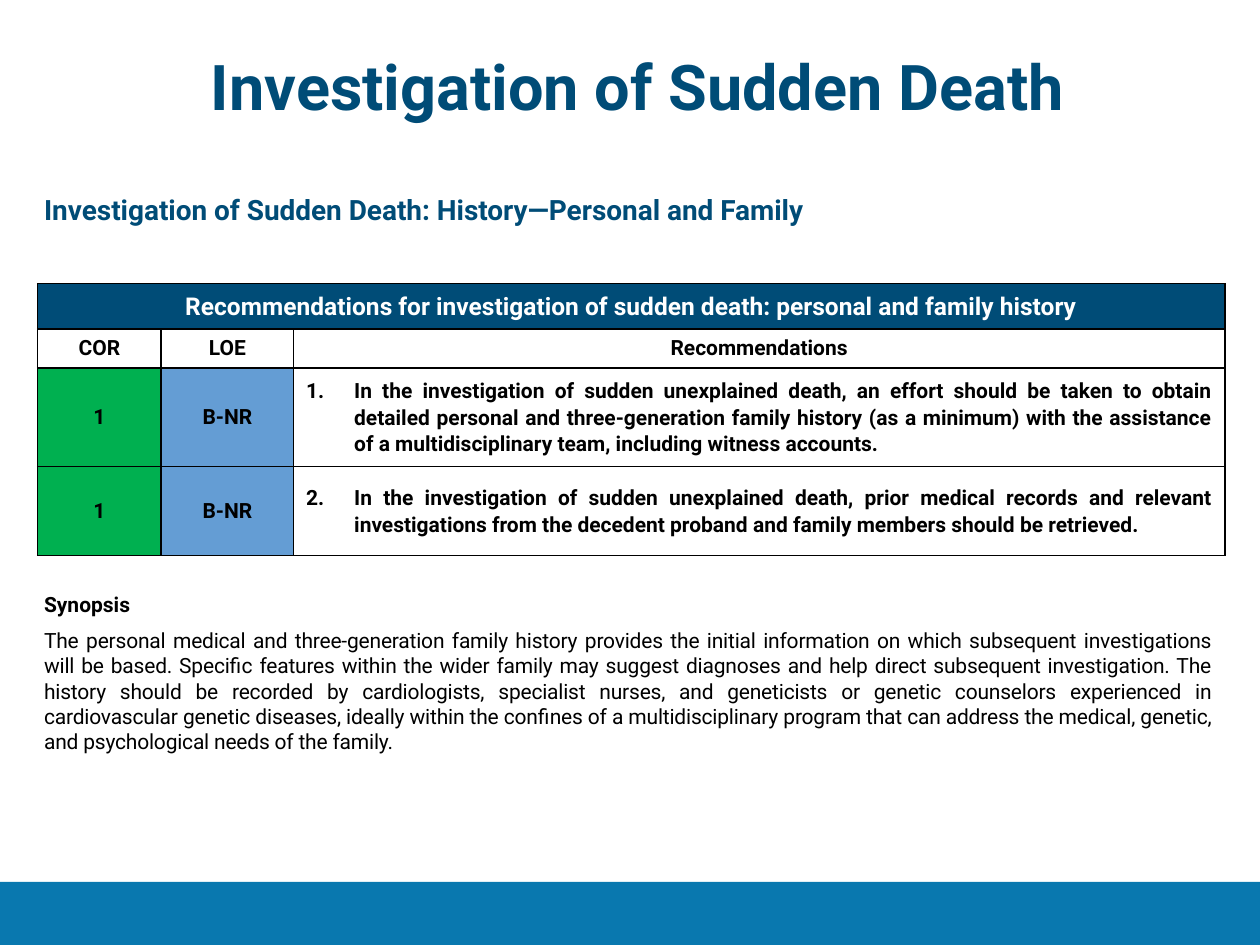
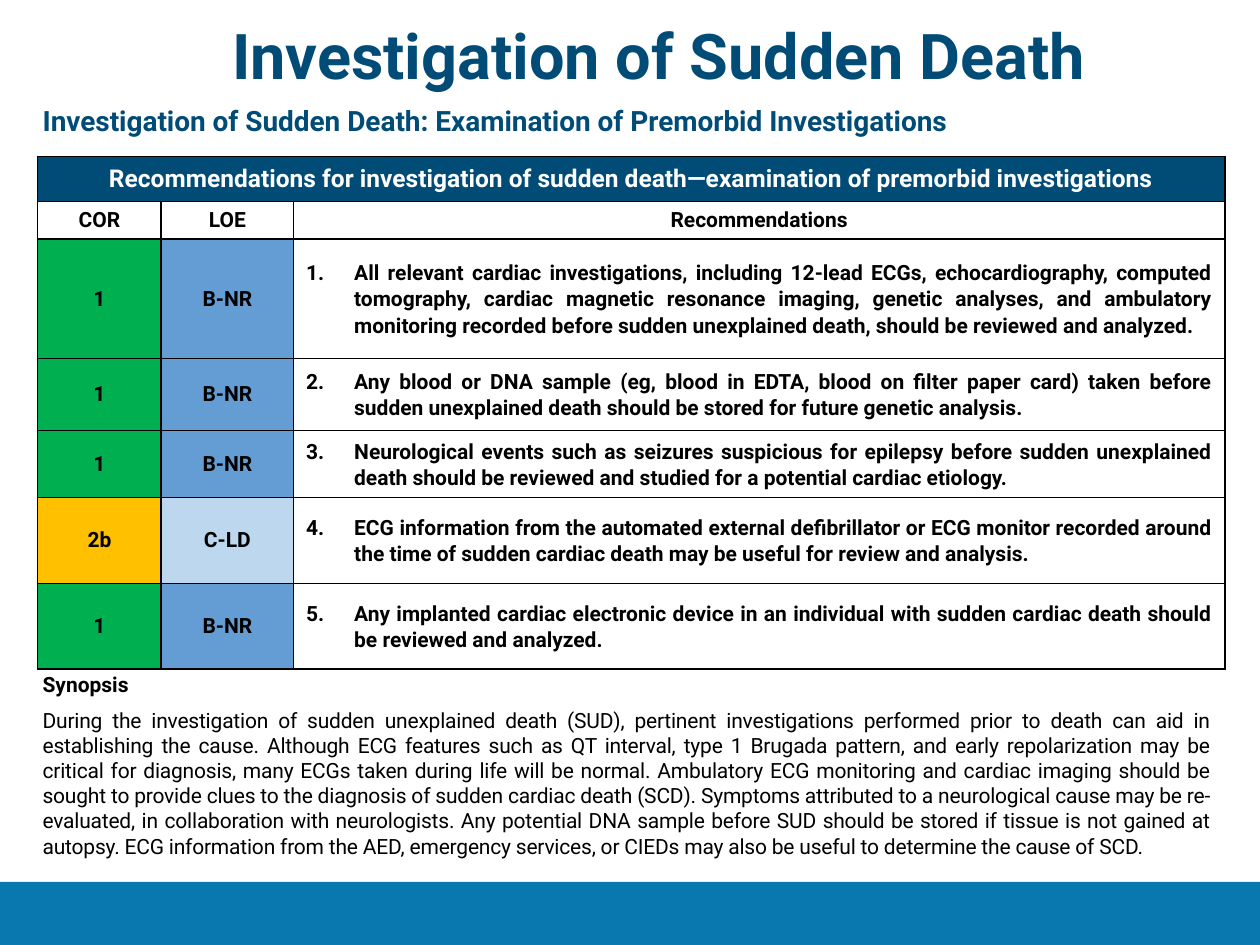
from lxml import etree
from pptx import Presentation
from pptx.dml.color import RGBColor
from pptx.enum import shapes, text
from pptx.oxml import ns
from pptx.util import Cm, Pt

FONT = "Roboto"
NAVY = RGBColor(0x00, 0x4C, 0x77)
BAND_BLUE = RGBColor(0x09, 0x78, 0xAF)
WHITE = RGBColor(0xFF, 0xFF, 0xFF)
BLACK = RGBColor(0x00, 0x00, 0x00)
CLASS_COLORS = {"1": RGBColor(0x00, 0xB0, 0x50), "2b": RGBColor(0xFF, 0xC0, 0x00)}
EVIDENCE_COLORS = {"B-NR": RGBColor(0x64, 0x9D, 0xD4), "C-LD": RGBColor(0xBD, 0xD7, 0xEE)}

PAGE_WIDTH, PAGE_HEIGHT, BAND_HEIGHT = 25.4, 19.05, 1.27
TABLE_LEFT = 0.76
COLUMN_WIDTHS = (2.49, 2.67, 18.77)
HEADER_HEIGHT = 0.91
LINE_SPACING = 1.07
NUMBER_INDENT = Cm(0.97)
CENTER, JUSTIFY = text.PP_ALIGN.CENTER, text.PP_ALIGN.JUSTIFY
TITLE = "Investigation of Sudden Death"


def style_para(para, size, color, align=None, bold=True):
    if align is not None:
        para.alignment = align
    for span in para.runs:
        font = span.font
        font.name, font.size, font.bold = FONT, Pt(size), bold
        font.color.rgb = color


def add_text(page, left, top, width, height, lines):
    """Add a text box with one paragraph per line of text."""
    box = page.shapes.add_textbox(Cm(left), Cm(top), Cm(width), Cm(height))
    frame = box.text_frame
    frame.word_wrap = True
    frame.auto_size = text.MSO_AUTO_SIZE.SHAPE_TO_FIT_TEXT
    frame.text = "\n".join(lines)
    return frame.paragraphs


def add_title(page, left, top, height):
    para, = add_text(page, left, top, 24.23, height, [TITLE])
    style_para(para, 36, NAVY, CENTER)


def add_subtitle(page, left, top, topic):
    para, = add_text(page, left, top, 22.86, 0.94, [f"{TITLE}: {topic}"])
    style_para(para, 16, NAVY)


def add_synopsis(page, left, top, height, body_text):
    heading, body = add_text(page, left, top, 24.05, height, ["Synopsis", body_text])
    style_para(heading, 12, BLACK, JUSTIFY)
    heading.space_after = Pt(6)
    style_para(body, 12, BLACK, JUSTIFY, bold=False)
    for span in body.runs:
        span.font._element.set("spc", "-10")


def add_band(page):
    band = page.shapes.add_shape(shapes.MSO_SHAPE.RECTANGLE, 0, Cm(PAGE_HEIGHT - BAND_HEIGHT),
                                 Cm(PAGE_WIDTH), Cm(BAND_HEIGHT))
    band.shadow.inherit = False
    band.fill.solid()
    band.fill.fore_color.rgb = BAND_BLUE
    band.line.fill.background()


def add_borders(cell):
    """Draw a thin black line on every side; call before the cell gets its fill."""
    properties = cell._tc.get_or_add_tcPr()
    for side in ("lnL", "lnR", "lnT", "lnB"):
        line = etree.SubElement(properties, ns.qn(f"a:{side}"), w=str(Pt(1)))
        fill = etree.SubElement(line, ns.qn("a:solidFill"))
        etree.SubElement(fill, ns.qn("a:srgbClr"), val=str(BLACK))


def fill_cell(cell, words, color=None, margins=(0.25, 0)):
    """Set text, margins, borders and fill, and return the paragraph."""
    cell.text_frame.text = words
    cell.margin_left = cell.margin_right = Cm(margins[0])
    cell.margin_top = cell.margin_bottom = Cm(margins[1])
    cell.vertical_anchor = text.MSO_ANCHOR.MIDDLE
    add_borders(cell)
    if color is None:
        cell.fill.background()
    else:
        cell.fill.solid()
        cell.fill.fore_color.rgb = color
    para = cell.text_frame.paragraphs[0]
    style_para(para, 12, BLACK, CENTER)
    return para


def number_para(para, number):
    """Make the paragraph a justified item of a numbered list."""
    properties = para._p.get_or_add_pPr()
    properties.set("marL", str(NUMBER_INDENT))
    properties.set("indent", str(-NUMBER_INDENT))
    etree.SubElement(properties, ns.qn("a:buFont"), typeface="+mj-lt")
    etree.SubElement(properties, ns.qn("a:buAutoNum"), type="arabicPeriod", startAt=str(number))
    para.line_spacing = LINE_SPACING
    para.alignment = JUSTIFY


def add_recommendations(page, top, heading, label_height, items):
    """Add the table; each item is (row height, class, evidence level, advice)."""
    heights = [HEADER_HEIGHT, label_height] + [item[0] for item in items]
    frame = page.shapes.add_table(len(heights), len(COLUMN_WIDTHS), Cm(TABLE_LEFT), Cm(top),
                                  Cm(sum(COLUMN_WIDTHS)), Cm(sum(heights)))
    table = frame.table
    table.first_row = table.horz_banding = False
    for column, width in zip(table.columns, COLUMN_WIDTHS):
        column.width = Cm(width)
    for row, height in zip(table.rows, heights):
        row.height = Cm(height)

    header = table.cell(0, 0)
    header.merge(table.cell(0, 2))
    para = fill_cell(header, heading, NAVY, margins=(0.28, 0.13))
    header.vertical_anchor = text.MSO_ANCHOR.TOP
    style_para(para, 14, WHITE)
    para.line_spacing, para.space_after = LINE_SPACING, Pt(8)
    for covered in (table.cell(0, 1), table.cell(0, 2)):
        add_borders(covered)

    for column, label in enumerate(("COR", "LOE", "Recommendations")):
        fill_cell(table.cell(1, column), label)
    for number, (_, grade, evidence, advice) in enumerate(items, 1):
        row = number + 1
        fill_cell(table.cell(row, 0), grade, CLASS_COLORS[grade])
        fill_cell(table.cell(row, 1), evidence, EVIDENCE_COLORS[evidence])
        number_para(fill_cell(table.cell(row, 2), advice), number)


def add_page(deck):
    page = deck.slides.add_slide(deck.slide_layouts[6])
    add_band(page)
    return page


def add_history_page(deck):
    page = add_page(deck)
    add_recommendations(
        page, 5.72,
        "Recommendations for investigation of sudden death: personal and family history", 0.79, [
            (1.98, "1", "B-NR",
             "In the investigation of sudden unexplained death, an effort should be taken to "
             "obtain detailed personal and three-generation family history (as a minimum) with "
             "the assistance of a multidisciplinary team, including witness accounts."),
            (1.8, "1", "B-NR",
             "In the investigation of sudden unexplained death, prior medical records and "
             "relevant investigations from the decedent proband and family members should be "
             "retrieved."),
        ])
    add_title(page, 0.74, 0.84, 1.8)
    add_subtitle(page, 0.64, 3.76, "History—Personal and Family")
    add_synopsis(
        page, 0.64, 11.81, 3.56,
        "The personal medical and three-generation family history provides the initial "
        "information on which subsequent investigations will be based. Specific features within "
        "the wider family may suggest diagnoses and help direct subsequent investigation. The "
        "history should be recorded by cardiologists, specialist nurses, and geneticists or "
        "genetic counselors experienced in cardiovascular genetic diseases, ideally within the "
        "confines of a multidisciplinary program that can address the medical, genetic, and "
        "psychological needs of the family.")


def add_premorbid_page(deck):
    page = add_page(deck)
    add_recommendations(
        page, 3.15,
        "Recommendations for investigation of sudden death—examination of premorbid "
        "investigations", 0.76, [
            (2.41, "1", "B-NR",
             "All relevant cardiac investigations, including 12-lead ECGs, echocardiography, "
             "computed tomography, cardiac magnetic resonance imaging, genetic analyses, and "
             "ambulatory monitoring recorded before sudden unexplained death, should be "
             "reviewed and analyzed."),
            (1.45, "1", "B-NR",
             "Any blood or DNA sample (eg, blood in EDTA, blood on filter paper card) taken "
             "before sudden unexplained death should be stored for future genetic analysis."),
            (1.35, "1", "B-NR",
             "Neurological events such as seizures suspicious for epilepsy before sudden "
             "unexplained death should be reviewed and studied for a potential cardiac "
             "etiology."),
            (1.73, "2b", "C-LD",
             "ECG information from the automated external defibrillator or ECG monitor recorded "
             "around the time of sudden cardiac death may be useful for review and analysis."),
            (1.73, "1", "B-NR",
             "Any implanted cardiac electronic device in an individual with sudden cardiac "
             "death should be reviewed and analyzed."),
        ])
    add_title(page, 1.17, 0.2, 1.42)
    add_subtitle(page, 0.61, 1.96, "Examination of Premorbid Investigations")
    add_synopsis(
        page, 0.61, 13.41, 4.06,
        "During the investigation of sudden unexplained death (SUD), pertinent investigations "
        "performed prior to death can aid in establishing the cause. Although ECG features such "
        "as QT interval, type 1 Brugada pattern, and early repolarization may be critical for "
        "diagnosis, many ECGs taken during life will be normal. Ambulatory ECG monitoring and "
        "cardiac imaging should be sought to provide clues to the diagnosis of sudden cardiac "
        "death (SCD). Symptoms attributed to a neurological cause may be re-evaluated, in "
        "collaboration with neurologists. Any potential DNA sample before SUD should be stored "
        "if tissue is not gained at autopsy. ECG information from the AED, emergency services, "
        "or CIEDs may also be useful to determine the cause of SCD.")


def main():
    deck = Presentation()
    deck.slide_width, deck.slide_height = Cm(PAGE_WIDTH), Cm(PAGE_HEIGHT)
    add_history_page(deck)
    add_premorbid_page(deck)
    deck.save("out.pptx")


if __name__ == "__main__":
    main()
